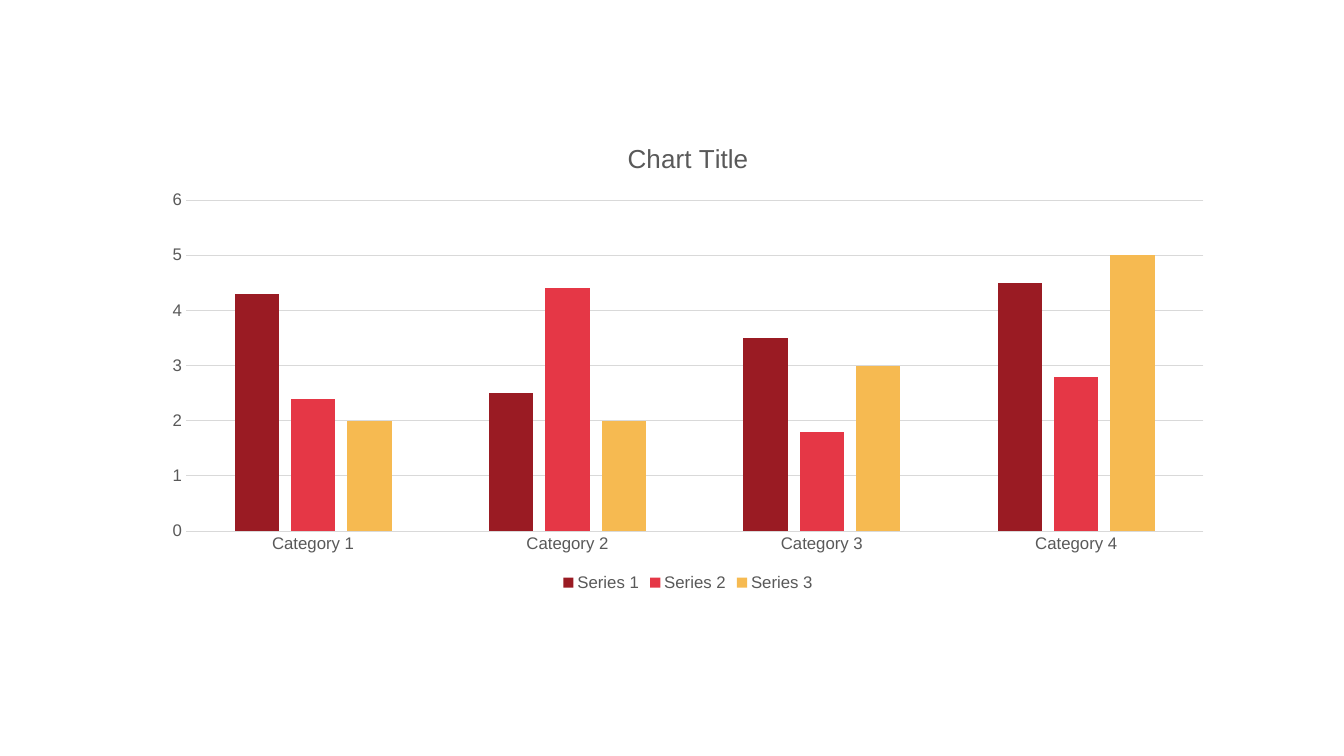
from dataclasses import dataclass

from pptx import Presentation
from pptx.chart.data import CategoryChartData
from pptx.dml.color import RGBColor
from pptx.enum.chart import XL_CHART_TYPE, XL_LEGEND_POSITION, XL_TICK_MARK
from pptx.util import Pt

COLUMNS = XL_CHART_TYPE.COLUMN_CLUSTERED
BOTTOM = XL_LEGEND_POSITION.BOTTOM
NO_TICK = XL_TICK_MARK.NONE


@dataclass(frozen=True)
class Theme:
    font: str = "Arial"
    ink: str = "595959"
    rule: str = "D9D9D9"
    background: str = "FFFFFF"
    series: tuple = ("9A1B23", "E53746", "F6BA51")
    title_size: float = 18.6
    label_size: float = 12
    rule_width: float = 0.75


THEME = Theme()
CATEGORIES = [f"Category {number}" for number in range(1, 5)]
SERIES = {
    "Series 1": (4.3, 2.5, 3.5, 4.5),
    "Series 2": (2.4, 4.4, 1.8, 2.8),
    "Series 3": (2, 2, 3, 5),
}


def style_font(font, size, color):
    font.name = THEME.font
    font.size = Pt(size)
    font.bold = False
    font.color.rgb = RGBColor.from_string(color)


def write_text(frame, text, *, size, color):
    para = frame.paragraphs[0]
    span = para.add_run()
    span.text = text
    style_font(para.font, size, color)
    style_font(span.font, size, color)


def style_rule(line):
    line.color.rgb = RGBColor.from_string(THEME.rule)
    line.width = Pt(THEME.rule_width)


def style_axes(chart):
    for axis in (chart.category_axis, chart.value_axis):
        axis.major_tick_mark = NO_TICK
        axis.minor_tick_mark = NO_TICK
        style_font(axis.tick_labels.font, THEME.label_size, THEME.ink)
    style_rule(chart.category_axis.format.line)
    values = chart.value_axis
    values.minimum_scale, values.maximum_scale, values.major_unit = 0, 6, 1
    values.format.line.fill.background()
    values.has_major_gridlines = True
    style_rule(values.major_gridlines.format.line)


def add_column_chart(page, left, top, width, height):
    data = CategoryChartData()
    data.categories = CATEGORIES
    for name, values in SERIES.items():
        data.add_series(name, values)
    chart = page.shapes.add_chart(
        COLUMNS, Pt(left), Pt(top), Pt(width), Pt(height), data
    ).chart
    style_font(chart.font, THEME.label_size, THEME.ink)

    chart.has_title = True
    write_text(chart.chart_title.text_frame, "Chart Title",
               size=THEME.title_size, color=THEME.ink)
    chart.chart_title.include_in_layout = False

    chart.has_legend = True
    chart.legend.position = BOTTOM
    chart.legend.include_in_layout = False
    style_font(chart.legend.font, THEME.label_size, THEME.ink)

    style_axes(chart)
    plot = chart.plots[0]
    plot.gap_width = 219
    plot.overlap = -27
    plot.vary_by_categories = False
    for series, color in zip(plot.series, THEME.series):
        series.invert_if_negative = False
        series.format.fill.solid()
        series.format.fill.fore_color.rgb = RGBColor.from_string(color)


def main():
    deck = Presentation()
    deck.slide_width, deck.slide_height = Pt(960), Pt(540)
    page = deck.slides.add_slide(deck.slide_layouts[6])
    page.background.fill.solid()
    page.background.fill.fore_color.rgb = RGBColor.from_string(THEME.background)
    add_column_chart(page, left=108, top=87, width=767, height=338.5)
    deck.save("out.pptx")


if __name__ == "__main__":
    main()
